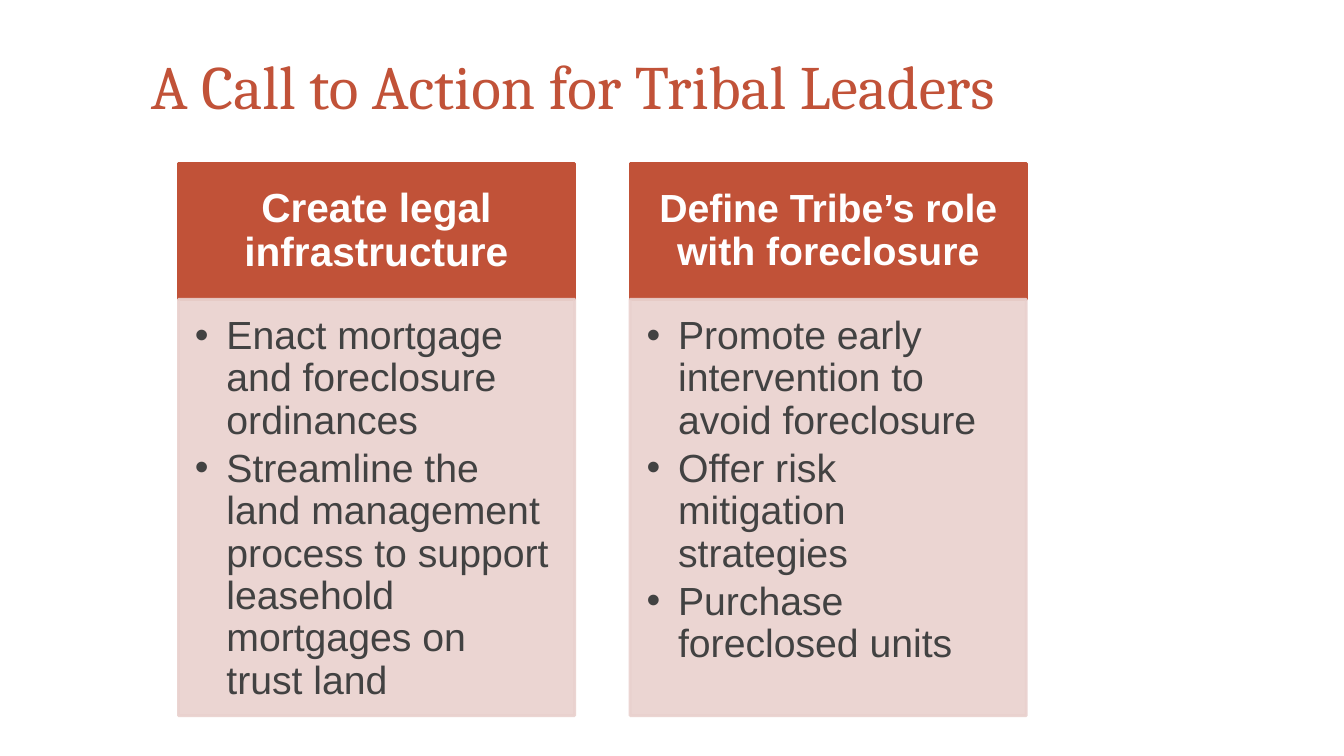
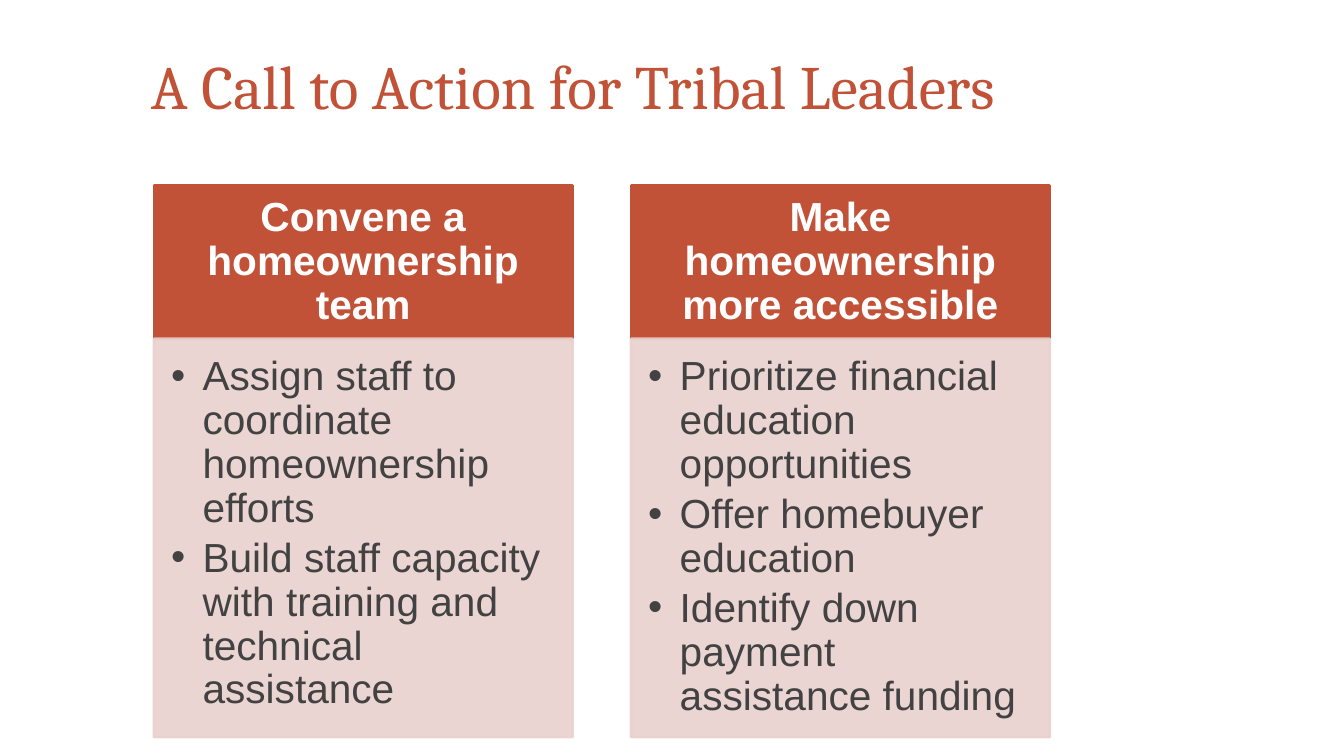
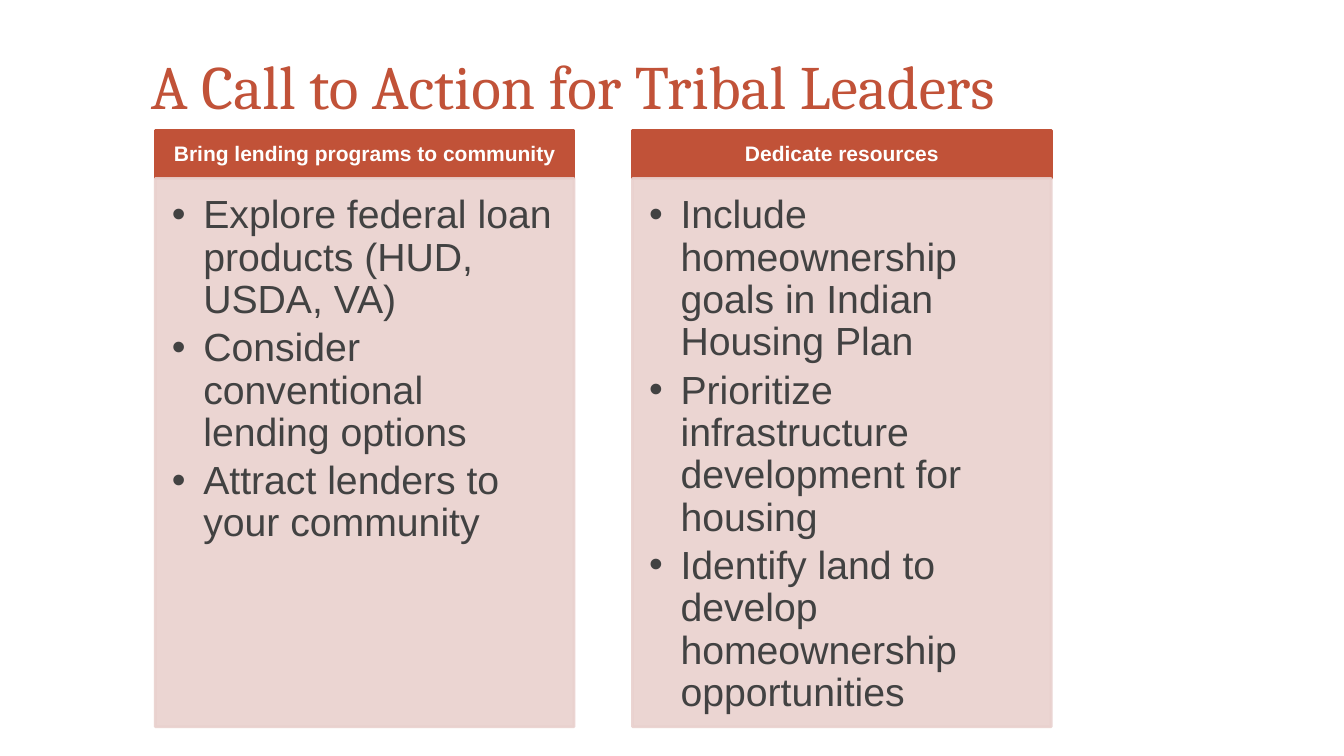
from lxml.etree import SubElement
from pptx import Presentation
from pptx.dml.color import RGBColor
from pptx.enum.shapes import MSO_SHAPE
from pptx.enum.text import MSO_ANCHOR, PP_ALIGN
from pptx.oxml.ns import qn
from pptx.util import Pt

# Shared style
RUST, BLUSH, WHITE, CHARCOAL = "C15238", "E9D1CE", "FFFFFF", "424242"
TITLE = "A Call to Action for Tribal Leaders"
COLUMN_STEP = 1.14  # distance between columns, in column widths
BULLET_INDENT = 22.5

# Each slide: grid in points, body size, and columns of (heading, heading size, bullets)
SLIDES = [
    {"left": 127.5, "top": 116.5, "width": 283, "header": 97.3, "body": 297.4, "size": 28, "columns": [
        ("Create legal infrastructure", 29, [
            "Enact mortgage and foreclosure ordinances",
            "Streamline the land management process to support leasehold mortgages on trust land"]),
        ("Define Tribe’s role with foreclosure", 28, [
            "Promote early intervention to avoid foreclosure",
            "Offer risk mitigation strategies",
            "Purchase foreclosed units"])]},
    {"left": 110, "top": 132.5, "width": 299, "header": 109.5, "body": 284.5, "size": 29, "columns": [
        ("Convene a homeownership team", 29, [
            "Assign staff to coordinate homeownership efforts",
            "Build staff capacity with training and technical assistance"]),
        ("Make homeownership more accessible", 29, [
            "Prioritize financial education opportunities",
            "Offer homebuyer education",
            "Identify down payment assistance funding"])]},
    {"left": 111, "top": 93.5, "width": 299, "header": 34, "body": 391.7, "size": 28, "columns": [
        ("Bring lending programs to community", 15, [
            "Explore federal loan products (HUD, USDA, VA)",
            "Consider conventional lending options",
            "Attract lenders to your community"]),
        ("Dedicate resources", 15, [
            "Include homeownership goals in Indian Housing Plan",
            "Prioritize infrastructure development for housing",
            "Identify land to develop homeownership opportunities"])]},
]


def write(paragraph, text, size, color, font="Arial", bold=False):
    paragraph.line_spacing = 0.9
    run = paragraph.add_run()
    run.text = text
    run.font.name = font
    run.font.size = Pt(size)
    run.font.bold = bold
    run.font.color.rgb = RGBColor.from_string(color)


def add_panel(slide, box, color, anchor, margins):
    shape = slide.shapes.add_shape(MSO_SHAPE.RECTANGLE, *[Pt(length) for length in box])
    shape.shadow.inherit = False
    shape.fill.solid()
    shape.fill.fore_color.rgb = RGBColor.from_string(color)
    shape.line.color.rgb = RGBColor.from_string(color)
    shape.line.width = Pt(2)
    frame = shape.text_frame
    frame.word_wrap = True
    frame.vertical_anchor = anchor
    frame.margin_left, frame.margin_top, frame.margin_right, frame.margin_bottom = [
        Pt(margin) for margin in margins]
    return shape


presentation = Presentation()
presentation.slide_width, presentation.slide_height = Pt(960), Pt(540)

for content in SLIDES:
    slide = presentation.slides.add_slide(presentation.slide_layouts[6])

    # Title
    title = slide.shapes.add_textbox(Pt(100.8), Pt(11.5), Pt(731.5), Pt(104.4))
    title.text_frame.word_wrap = True
    title.text_frame.vertical_anchor = MSO_ANCHOR.MIDDLE
    write(title.text_frame.paragraphs[0], TITLE, 44, RUST, "Cambria")

    width, size = content["width"], content["size"]
    for index, (heading, heading_size, bullets) in enumerate(content["columns"]):
        left = content["left"] + index * COLUMN_STEP * width

        # Column heading, with margins in proportion to its text
        side, edge = 0.56 * heading_size, 0.32 * heading_size
        header = add_panel(slide, (left, content["top"], width, content["header"]),
                           RUST, MSO_ANCHOR.MIDDLE, (side, edge, side, edge))
        paragraph = header.text_frame.paragraphs[0]
        paragraph.alignment = PP_ALIGN.CENTER
        write(paragraph, heading, heading_size, WHITE, bold=True)

        # Column body, slightly transparent
        body = add_panel(slide, (left, content["top"] + content["header"], width, content["body"]),
                         BLUSH, MSO_ANCHOR.TOP, [factor * size for factor in (0.42, 0.42, 0.56, 0.63)])
        for color in body.element.spPr.iter(qn("a:srgbClr")):
            SubElement(color, qn("a:alpha"), val="90000")

        # Bullets
        for number, bullet in enumerate(bullets):
            frame = body.text_frame
            paragraph = frame.add_paragraph() if number else frame.paragraphs[0]
            properties = paragraph._p.get_or_add_pPr()
            properties.set("marL", str(Pt(BULLET_INDENT)))
            properties.set("indent", str(-Pt(BULLET_INDENT)))
            SubElement(properties, qn("a:buFont"), typeface="Arial")
            SubElement(properties, qn("a:buChar"), char="•")
            paragraph.alignment = PP_ALIGN.LEFT
            paragraph.space_after = Pt(0.15 * size)
            write(paragraph, bullet, size, CHARCOAL)

presentation.save("out.pptx")
